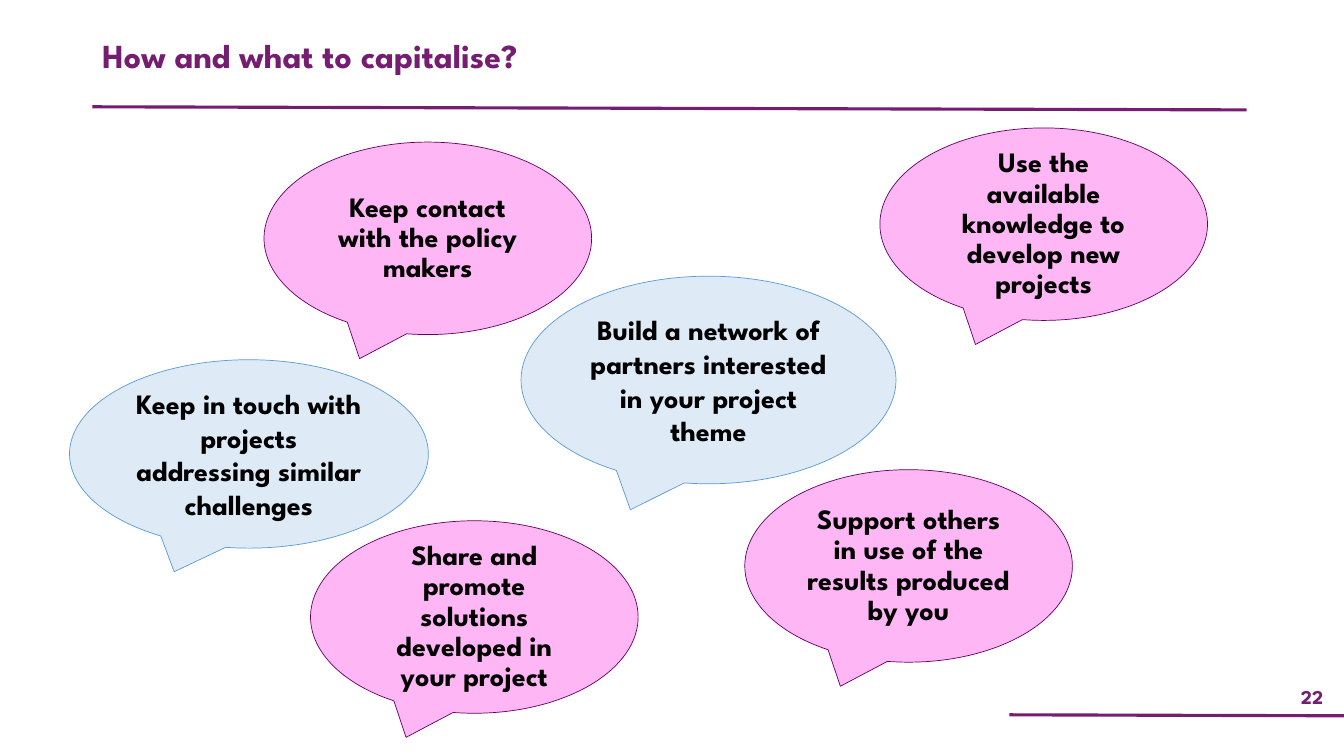
from pptx import Presentation
from pptx.dml.color import RGBColor
from pptx.enum.shapes import MSO_CONNECTOR as Link, MSO_SHAPE as Shape
from pptx.enum.text import MSO_ANCHOR as Anchor, MSO_AUTO_SIZE as Fit, PP_ALIGN as Align
from pptx.oxml.ns import qn
from pptx.util import Pt
from lxml.etree import SubElement

PLUM = "751D70"
PINK = {"fill": "FFB6F4", "edge": "660066", "gap": 0.9}
BLUE = {"fill": "DEEBF7", "edge": "5B9BD5", "gap": 1.0}
SMALL = (234, 137.5)

BUBBLES = [
    ("Keep contact with the policy makers", (188.6, 101.5, *SMALL), PINK),
    ("Keep in touch with projects addressing similar challenges",
     (49.7, 257, 256.3, 134.6), BLUE),
    ("Support others in use of the results produced by you",
     (532, 335.5, *SMALL), PINK),
    ("Use the available knowledge to develop new projects",
     (628.5, 91.4, *SMALL), PINK),
    ("Share and promote solutions developed in your project",
     (221.8, 372, *SMALL), PINK),
    ("Build a network of partners interested in your project theme",
     (372.2, 197.3, 267.8, 148.3), BLUE),
]


def color(code):
    return RGBColor.from_string(code)


def write(shape, text, size, ink, align, anchor, gap=1.0):
    frame = shape.text_frame
    look = {"word_wrap": True, "auto_size": Fit.NONE, "vertical_anchor": anchor}
    for name, value in look.items():
        setattr(frame, name, value)
    frame.text = text
    para = frame.paragraphs[0]
    layout = {"alignment": align, "line_spacing": gap, "space_before": Pt(0)}
    for name, value in layout.items():
        setattr(para, name, value)
    font = para.runs[0].font
    for name, value in {"name": "League Spartan", "size": Pt(size), "bold": True}.items():
        setattr(font, name, value)
    font.color.rgb = color(ink)


def rule(slide, *ends):
    line = slide.shapes.add_connector(Link.STRAIGHT, *map(Pt, ends))
    line.line.color.rgb = color(PLUM)
    line.line.width = Pt(2.25)
    SubElement(line._element.spPr, qn("a:effectLst"))


def header(slide, box):
    left, top, width, height = box
    title = slide.shapes.title
    sides = {"left": left, "top": top, "width": width, "height": height}
    for name, value in sides.items():
        setattr(title, name, Pt(value))
    write(title, "How and what to capitalise?", 24, PLUM, Align.JUSTIFY, Anchor.TOP, 0.9)
    rule(slide, left, top + 51.8, left + 824.5, top + 54)


def footer(slide, box):
    left, top, width, height = box
    number = slide.shapes.add_textbox(*map(Pt, box))
    write(number, "22", 14, PLUM, Align.CENTER, Anchor.MIDDLE)
    rule(slide, left - 193.5, top + height, left + width + 1, top + height + 0.7)


def bubble(slide, text, box, style):
    shape = slide.shapes.add_shape(Shape.OVAL_CALLOUT, *map(Pt, box))
    shape.shadow.inherit = False
    shape.fill.solid()
    shape.fill.fore_color.rgb = color(style["fill"])
    shape.line.color.rgb = color(style["edge"])
    shape.line.width = Pt(0.5)
    write(shape, text, 20, "000000", Align.CENTER, Anchor.MIDDLE, style["gap"])


def main():
    deck = Presentation()
    deck.slide_width, deck.slide_height = Pt(960), Pt(540)
    slide = deck.slides.add_slide(deck.slide_layouts[5])
    header(slide, (66, 24.5, 700.5, 47))
    footer(slide, (914.5, 484.6, 45.5, 26))
    for text, box, style in BUBBLES:
        bubble(slide, text, box, style)
    deck.save("out.pptx")


if __name__ == "__main__":
    main()
